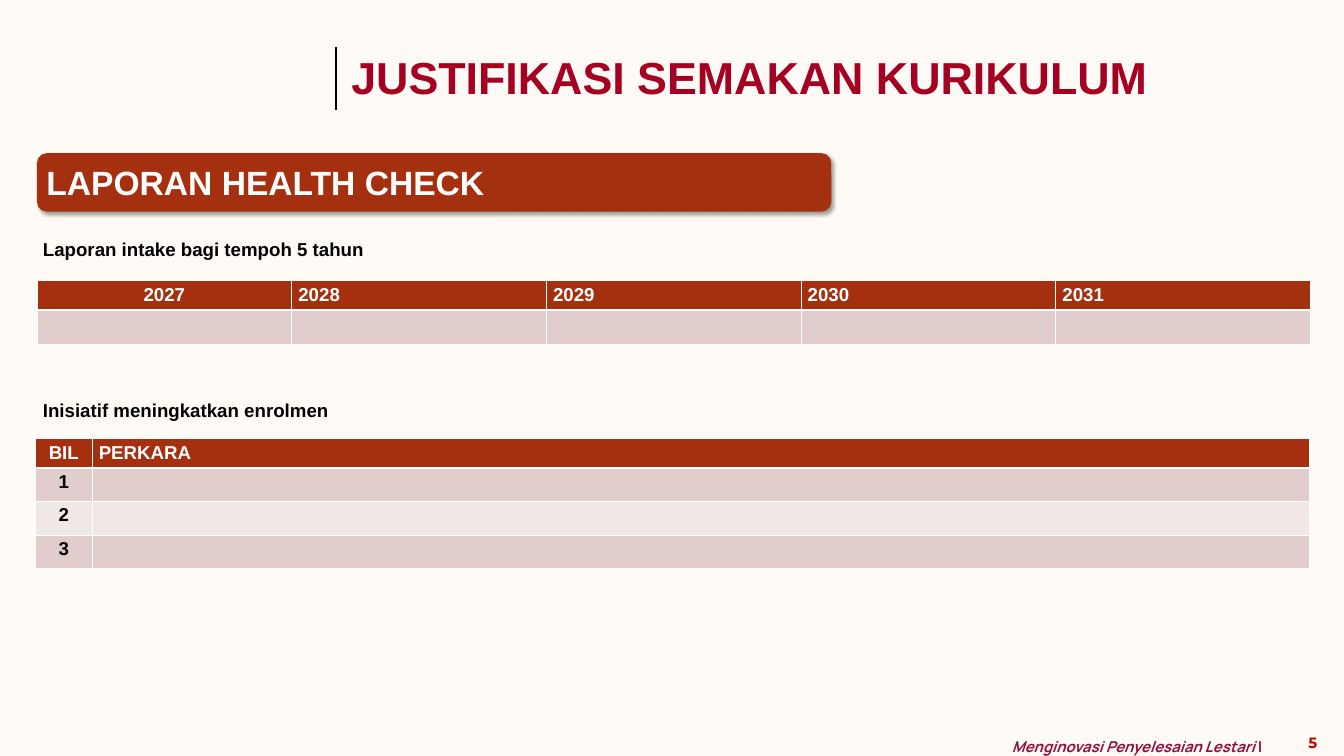
from dataclasses import dataclass

from lxml import etree
from pptx import Presentation
from pptx.dml.color import RGBColor
from pptx.enum.shapes import MSO_CONNECTOR, MSO_SHAPE
from pptx.enum.text import MSO_ANCHOR, MSO_AUTO_SIZE, PP_ALIGN
from pptx.oxml import parse_xml
from pptx.oxml.ns import nsdecls, qn
from pptx.util import Emu, Pt

PX = 9144  # 100 px to the inch


@dataclass(frozen=True)
class Theme:
    background: str = "FEFAF5"
    rust: str = "A5300F"
    band_dark: str = "E1CDCC"
    band_light: str = "F0E8E7"
    crimson: str = "A50021"
    plum: str = "901042"
    red: str = "C00000"
    white: str = "FFFFFF"
    black: str = "000000"
    font: str = "Arial"
    slogan_font: str = "Manrope"
    number_font: str = "Montserrat"
    title: int = 48
    banner: int = 36
    body: int = 20
    footer: int = 16


T = Theme()


def px(*values):
    return [Emu(v * PX) for v in values]


def rgb(color):
    return RGBColor.from_string(color)


def write(tf, *texts, size=T.body, color=T.black, font=T.font,
          italics=(), align=PP_ALIGN.LEFT, spacing=None):
    """Fill the first paragraph with one bold run per text."""
    p = tf.paragraphs[0]
    p.alignment = align
    if spacing:
        p.line_spacing = spacing
    for i, text in enumerate(texts):
        r = p.add_run()
        r.text = text
        f = r.font
        f.name, f.size, f.bold = font, Pt(size), True
        f.italic = i in italics
        f.color.rgb = rgb(color)


def add_text(s, box, *texts, grow=True, wrap=True, inset=None, **fmt):
    tf = s.shapes.add_textbox(*px(*box)).text_frame
    tf.word_wrap = wrap
    if grow:
        tf.auto_size = MSO_AUTO_SIZE.SHAPE_TO_FIT_TEXT
    if inset is not None:
        tf.margin_left = tf.margin_top = tf.margin_right = tf.margin_bottom = inset
    write(tf, *texts, **fmt)


def set_borders(cell, bottom=1):
    """White cell borders, placed before the fill as the schema asks."""
    tcPr = cell._tc.get_or_add_tcPr()
    for i, (side, width) in enumerate(zip("LRTB", (1, 1, 1, bottom))):
        tcPr.insert(i, parse_xml(
            f'<a:ln{side} {nsdecls("a")} w="{Pt(width)}"><a:solidFill>'
            f'<a:srgbClr val="{T.white}"/></a:solidFill></a:ln{side}>'))


def add_table(s, box, rows, col_widths, centred, row_height):
    """Rust header over banded rows; centred tells which cells are centred."""
    x, y, w, h = box
    table = s.shapes.add_table(len(rows), len(col_widths), *px(x, y, w, h)).table
    for col, width in zip(table.columns, col_widths):
        col.width = Emu(width * PX)
    for i, row in enumerate(rows):
        table.rows[i].height = Emu((row_height if i else 42) * PX)
        for j, text in enumerate(row):
            cell = table.cell(i, j)
            cell.fill.solid()
            band = T.band_dark if i % 2 else T.band_light
            cell.fill.fore_color.rgb = rgb(band if i else T.rust)
            set_borders(cell, bottom=1 if i else 3)
            if text:
                write(cell.text_frame, text,
                      color=T.black if i else T.white,
                      align=PP_ALIGN.CENTER if centred(i, j) else PP_ALIGN.LEFT)


def add_header(s, x, y):
    # Vertical rule and title
    rule = s.shapes.add_connector(MSO_CONNECTOR.STRAIGHT, *px(x, y + 94, x, y))
    rule.line.color.rgb = rgb(T.black)
    rule.line.width = Pt(3)
    etree.SubElement(rule._element.spPr, qn("a:effectLst"))
    add_text(s, (x + 13, y - 1, 1278, 125), "JUSTIFIKASI SEMAKAN KURIKULUM",
             grow=False, size=T.title, color=T.crimson)


def add_banner(s, box):
    sp = s.shapes.add_shape(MSO_SHAPE.ROUNDED_RECTANGLE, *px(*box))
    sp.fill.solid()
    sp.fill.fore_color.rgb = rgb(T.rust)
    sp.line.fill.background()
    # Soft shadow to the lower right
    sp._element.spPr.append(parse_xml(
        f'<a:effectLst {nsdecls("a")}><a:outerShdw blurRad="{Pt(4)}" '
        f'dist="{Pt(3)}" dir="2700000" algn="tl" rotWithShape="0">'
        f'<a:srgbClr val="{T.black}"><a:alpha val="40000"/></a:srgbClr>'
        '</a:outerShdw></a:effectLst>'))
    tf = sp.text_frame
    tf.vertical_anchor = MSO_ANCHOR.MIDDLE
    write(tf, "LAPORAN HEALTH CHECK", size=T.banner, color=T.white)


def add_intake(s, x, y, w):
    years = [str(year) for year in range(2027, 2032)]
    add_text(s, (x - 1, y, 1000, 44), "Laporan intake bagi tempoh 5 tahun")
    add_table(s, (x, y + 69, w, 93), [years, [""] * len(years)],
              [w // len(years)] * len(years), lambda i, j: i == j == 0, 51)


def add_initiatives(s, x, y, w):
    rows = [("BIL", "PERKARA")] + [(str(n), "") for n in range(1, 4)]
    add_text(s, (x + 1, y, 1000, 44), "Inisiatif meningkatkan enrolmen")
    add_table(s, (x, y + 65, w, 192), rows, [84, w - 84],
              lambda i, j: j == 0, 50)


def add_footer(s, x, y):
    # Slogan and page number
    add_text(s, (x, y, 420, 38), "Menginovasi Penyelesaian Lestari ", "|",
             inset=0, italics=(0,), spacing=1.4, size=T.footer,
             color=T.plum, font=T.slogan_font)
    add_text(s, (x + 401, y, 93, 37), "5", size=T.footer, color=T.red,
             font=T.number_font, align=PP_ALIGN.CENTER)


def main():
    prs = Presentation()
    prs.slide_width, prs.slide_height = px(2000, 1125)
    s = prs.slides.add_slide(prs.slide_layouts[6])
    s.background.fill.solid()
    s.background.fill.fore_color.rgb = rgb(T.background)

    add_footer(s, 1506, 1087)
    add_header(s, 500, 70)
    add_banner(s, (55, 228, 1182, 87))
    add_intake(s, 55, 349, 1895)
    add_initiatives(s, 53, 588, 1895)
    prs.save("out.pptx")


if __name__ == "__main__":
    main()
